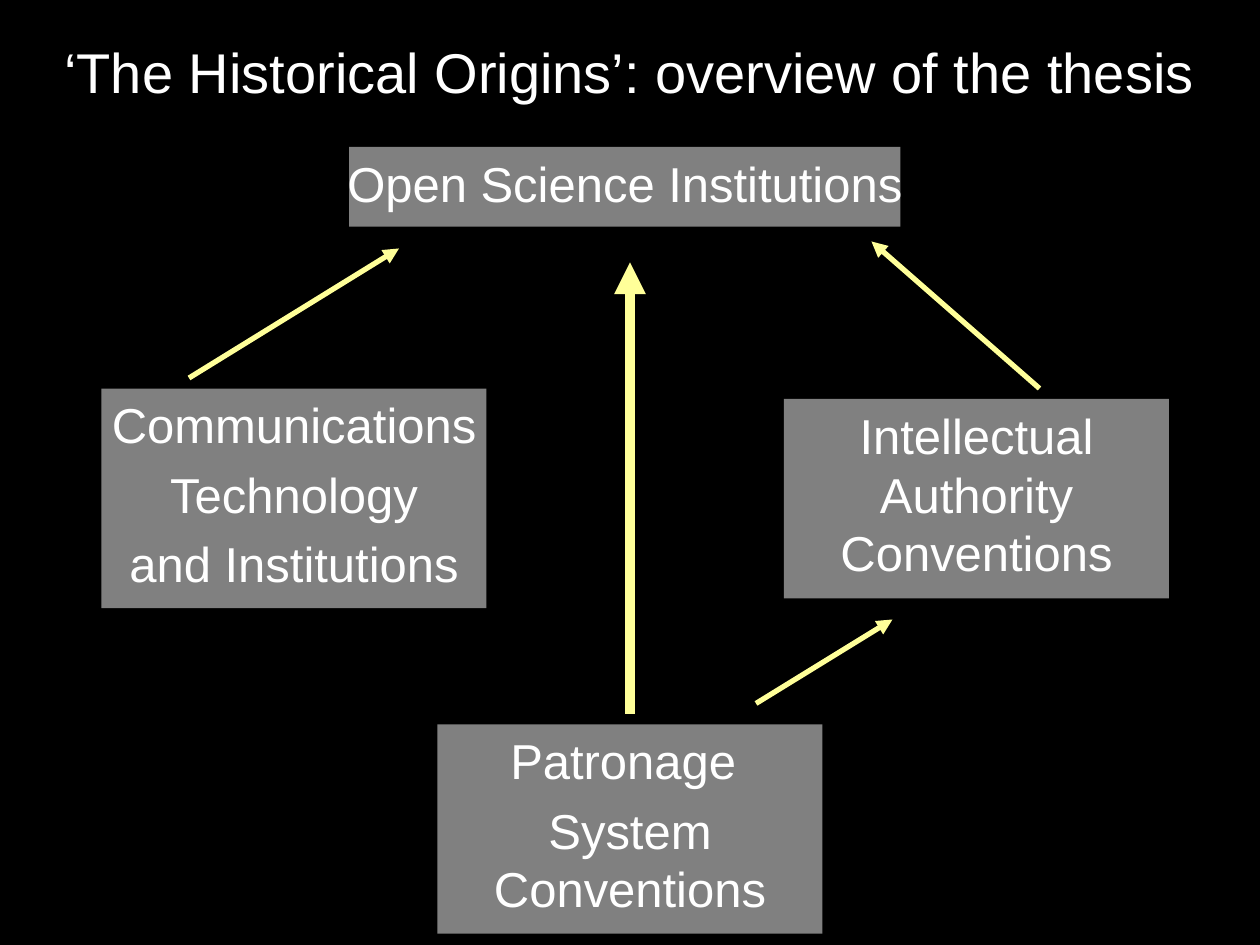
from pptx import Presentation
from pptx import util as u
from pptx.dml.color import RGBColor
from pptx.enum import shapes, text
from pptx.oxml import ns
from lxml import etree

Pt = u.Pt
HUES = {"back": "000000", "box": "808080", "arrow": "FFFF99", "text": "FFFFFF"}
hue = {name: RGBColor.from_string(code) for name, code in HUES.items()}

deck = Presentation()
deck.slide_width, deck.slide_height = Pt(720), Pt(540)
slide = deck.slides.add_slide(deck.slide_layouts[6])
slide.background.fill.solid()
slide.background.fill.fore_color.rgb = hue["back"]


def write(home, place, lines, size, gap=0):
    """Add a centred text box, one paragraph per line, to a shape tree."""
    frame = home.add_textbox(*map(Pt, place)).text_frame
    frame.word_wrap = True
    frame.vertical_anchor = text.MSO_ANCHOR.TOP
    frame.text = "\n".join(lines)
    look = {"name": "Arial", "size": Pt(size)}
    for para in frame.paragraphs:
        para.alignment = text.PP_ALIGN.CENTER
        para.space_before = Pt(gap)
        for key, value in look.items():
            setattr(para.font, key, value)
        para.font.color.rgb = hue["text"]


write(slide.shapes, (18, 18, 684, 116), ["‘The Historical Origins’: overview of the thesis"], 32)

# Each box: centre x, top, box width and height, text width and height, lines
boxes = [
    (558, 228, 220, 114, 264, 120, ["Intellectual Authority Conventions"]),
    (168, 222, 220, 125.5, 264, 132, ["Communications", "Technology", "and Institutions"]),
    (360, 414, 220, 119.5, 264, 126, ["Patronage ", "System Conventions"]),
    (357, 84, 315, 45.5, 378, 48, ["Open Science Institutions"]),
]
for mid, top, wide, high, span, tall, lines in boxes:
    group = slide.shapes.add_group_shape()
    box = group.shapes.add_shape(
        shapes.MSO_SHAPE.RECTANGLE, Pt(mid - wide / 2), Pt(top), Pt(wide), Pt(high))
    box.shadow.inherit = False
    box.fill.solid()
    box.fill.fore_color.rgb = hue["box"]
    box.line.fill.background()
    write(group.shapes, (mid - span / 2, top, span, tall), lines, 28, 6)

# Each arrow: start x and y, end x and y, line width
arrows = [
    (360, 408, 360, 150, 6),
    (432, 402, 510, 354, 3),
    (108, 216, 228, 142, 3),
    (594, 222, 498, 138, 3),
]
for *ends, width in arrows:
    arrow = slide.shapes.add_connector(shapes.MSO_CONNECTOR.STRAIGHT, *map(Pt, ends))
    arrow.line.width = Pt(width)
    arrow.line.color.rgb = hue["arrow"]
    props = arrow.element.spPr
    etree.SubElement(props.find(ns.qn("a:ln")), ns.qn("a:tailEnd"), type="triangle")
    etree.SubElement(props, ns.qn("a:effectLst"))

deck.save("out.pptx")
